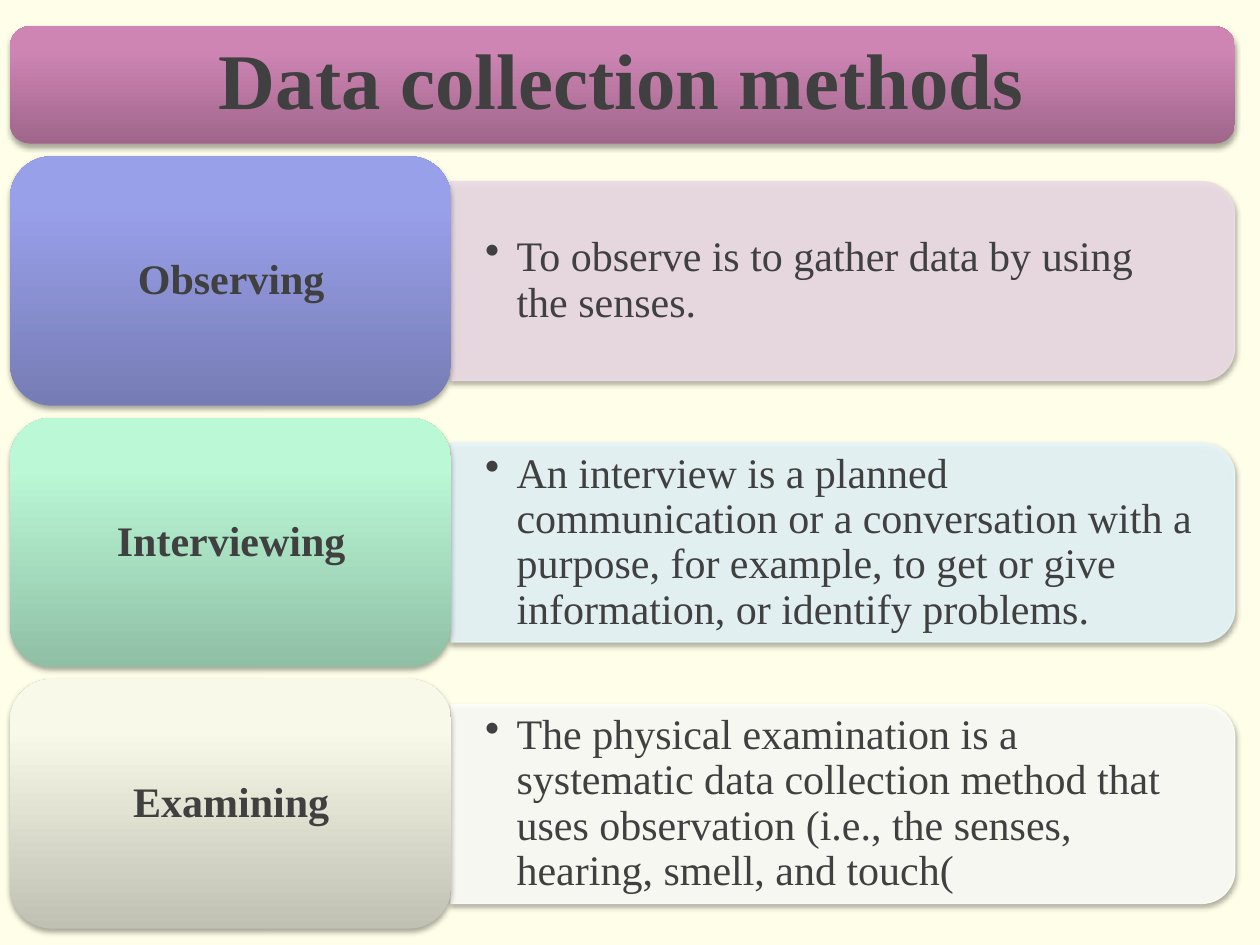
import copy

import lxml.etree
import pptx
import pptx.dml.color
import pptx.enum.shapes
import pptx.enum.text
import pptx.oxml.ns
import pptx.util

Inches = pptx.util.Inches
qn = pptx.oxml.ns.qn
SHAPES = pptx.enum.shapes.MSO_SHAPE
ALIGN = pptx.enum.text.PP_ALIGN

COLORS = {"background": "FFFFE9", "text": "404040", "shadow": "000000"}
TITLE_BANDS = [(0, "9F668A"), (0.8, "CE85B4"), (1, "D084B5")]
METHODS = [
    ("Observing",
     "To observe is to gather data by using the senses.",
     [(0, "767CB4"), (0.8, "99A0EA"), (1, "98A0EC")], "ECDCE6"),
    ("Interviewing",
     "An interview is a planned communication or a conversation with a purpose, "
     "for example, to get or give information, or identify problems.",
     [(0, "8FBFA5"), (0.8, "BAF8D6"), (1, "BAFAD7")], "E7F6FA"),
    ("Examining",
     "The physical examination is a systematic data collection method that uses "
     "observation (i.e., the senses, hearing, smell, and touch(",
     [(0, "C0C0B3"), (0.8, "F9F9E9"), (1, "FAFAE9")], "FFFFFA"),
]

LEFT = 0.08
TILE_WIDTH, TILE_HEIGHT = 3.5, 1.98
PANEL_WIDTH, PANEL_HEIGHT = 6.22, 1.58
FIRST_TOP, LAST_TOP = 1.24, 5.39
ROW_STEP = (LAST_TOP - FIRST_TOP) / (len(METHODS) - 1)


def rgb(value):
    return pptx.dml.color.RGBColor.from_string(value)


class SlideBuilder:
    font_name = "Times New Roman"

    def __init__(self, deck):
        self.page = deck.slides.add_slide(deck.slide_layouts[5])
        fill = self.page.background.fill
        fill.solid()
        fill.fore_color.rgb = rgb(COLORS["background"])

    def add_shadow(self, shape):
        shape.shadow.inherit = False
        effects = shape.element.spPr.find(qn("a:effectLst"))
        shadow = lxml.etree.SubElement(
            effects, qn("a:outerShdw"), blurRad="40000", dist="23000",
            dir="5400000", rotWithShape="0")
        color = lxml.etree.SubElement(shadow, qn("a:srgbClr"), val=COLORS["shadow"])
        lxml.etree.SubElement(color, qn("a:alpha"), val="35000")

    def add_tile(self, left, top, width, height, bands):
        tile = self.page.shapes.add_shape(
            SHAPES.ROUNDED_RECTANGLE, Inches(left), Inches(top),
            Inches(width), Inches(height))
        tile.fill.gradient()
        tile.fill.gradient_angle = 90
        stop_list = next(tile.element.spPr.iter(qn("a:gsLst")))
        stop_list.append(copy.deepcopy(stop_list[-1]))
        for stop, (position, color) in zip(tile.fill.gradient_stops, bands):
            stop.position = position
            stop.color.rgb = rgb(color)
        tile.line.fill.background()
        self.add_shadow(tile)

    def add_panel(self, left, middle, color):
        panel = self.page.shapes.add_shape(
            SHAPES.ROUND_2_SAME_RECTANGLE,
            Inches(left + (PANEL_WIDTH - PANEL_HEIGHT) / 2),
            Inches(middle - PANEL_WIDTH / 2),
            Inches(PANEL_HEIGHT), Inches(PANEL_WIDTH))
        panel.rotation = 90
        panel.fill.solid()
        panel.fill.fore_color.rgb = rgb(color)
        panel.line.color.rgb = rgb(color)
        panel.line.width = pptx.util.Pt(0.75)
        for element in list(panel.element.spPr.iter(qn("a:srgbClr"))):
            lxml.etree.SubElement(element, qn("a:alpha"), val="90000")
        self.add_shadow(panel)

    def fill_text(self, box, text, size, insets, bold=False, align=ALIGN.CENTER, bullet=False):
        frame = box.text_frame
        frame.word_wrap = True
        frame.auto_size = pptx.enum.text.MSO_AUTO_SIZE.NONE
        frame.vertical_anchor = pptx.enum.text.MSO_ANCHOR.MIDDLE
        frame.margin_left = frame.margin_right = Inches(insets[0])
        frame.margin_top = frame.margin_bottom = Inches(insets[1])
        para = frame.paragraphs[0]
        if bullet:
            para.level = 1
            properties = para._p.get_or_add_pPr()
            properties.set("marL", str(Inches(0.25)))
            properties.set("indent", str(Inches(-0.25)))
            lxml.etree.SubElement(properties, qn("a:buChar"), char="•")
        para.alignment = align
        para.line_spacing = 0.9
        span = para.add_run()
        span.text = text
        span.font.name = self.font_name
        span.font.size = pptx.util.Pt(size)
        span.font.bold = bold
        span.font.color.rgb = rgb(COLORS["text"])

    def add_title(self, text):
        self.add_tile(LEFT, 0.21, 9.72, 0.93, TITLE_BANDS)
        title = self.page.shapes.title
        title.left, title.top = Inches(0.12), Inches(0.25)
        title.width, title.height = Inches(9.62), Inches(0.84)
        self.page.shapes.element.append(title.element)
        self.fill_text(title, text, 45, (0.19, 0.09), bold=True)

    def add_text(self, left, middle, width, height, text, **style):
        box = self.page.shapes.add_textbox(
            Inches(left), Inches(middle - height / 2), Inches(width), Inches(height))
        self.fill_text(box, text, 24, **style)

    def add_method(self, top, name, description, bands, panel_color):
        middle = top + TILE_HEIGHT / 2
        panel_left = LEFT + TILE_WIDTH
        self.add_panel(panel_left, middle, panel_color)
        self.add_text(panel_left, middle, 6.15, 1.43, description,
                      insets=(0.27, 0.14), align=ALIGN.LEFT, bullet=True)
        self.add_tile(LEFT, top, TILE_WIDTH, TILE_HEIGHT, bands)
        self.add_text(LEFT + 0.1, middle, 3.31, 1.78, name, insets=(0.1, 0.05), bold=True)


def main():
    deck = pptx.Presentation()
    deck.slide_width, deck.slide_height = Inches(10), Inches(7.5)
    builder = SlideBuilder(deck)
    builder.add_title("Data collection methods")
    for row, method in enumerate(METHODS):
        builder.add_method(FIRST_TOP + row * ROW_STEP, *method)
    deck.save("out.pptx")


if __name__ == "__main__":
    main()
